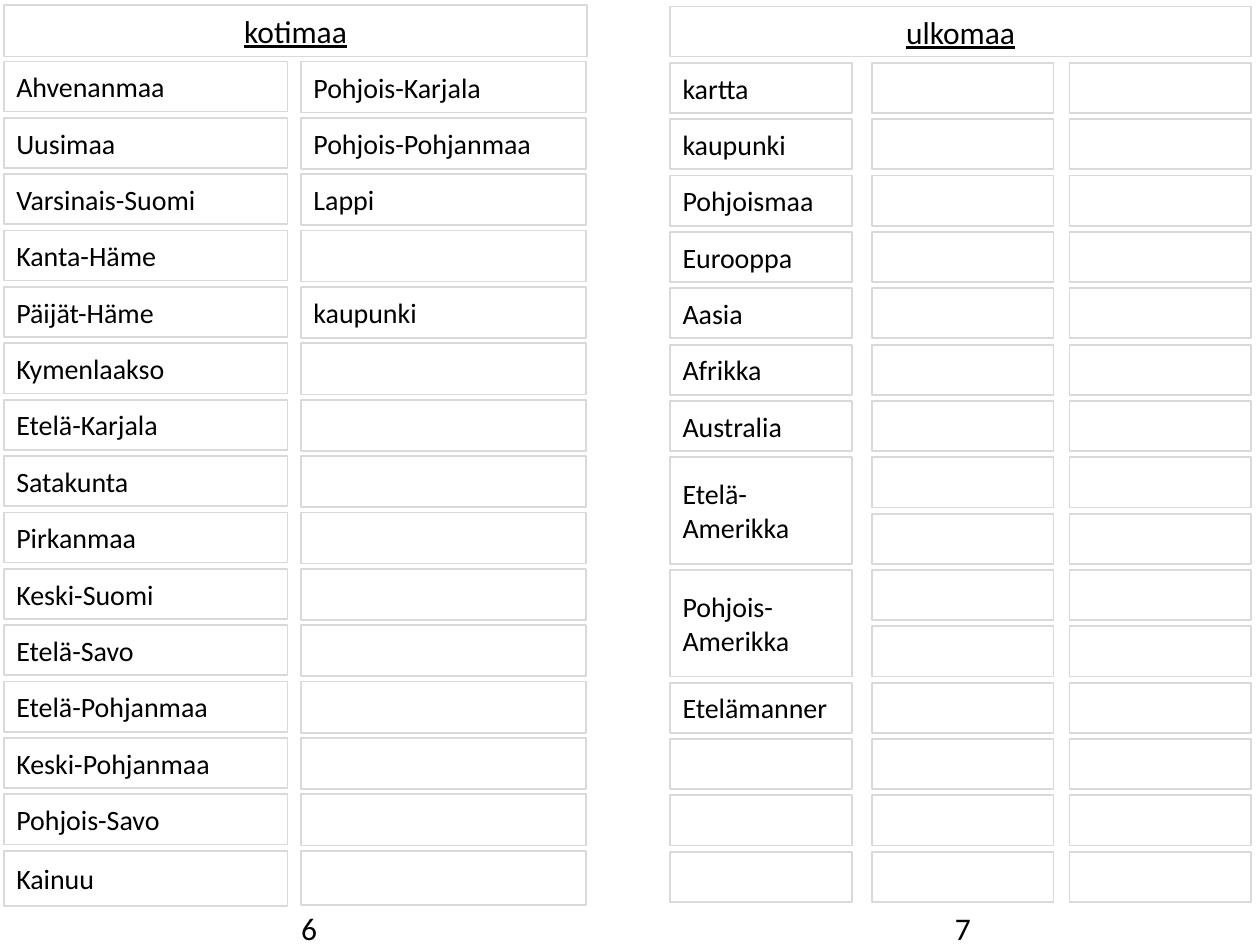
from dataclasses import dataclass

from pptx import Presentation
from pptx.dml.color import RGBColor
from pptx.enum.shapes import MSO_SHAPE
from pptx.enum.text import MSO_ANCHOR, MSO_AUTO_SIZE, PP_ALIGN
from pptx.util import Cm, Pt

ROWS = 15
CELL_HEIGHT = 1.01
FONT = "Calibri"
TEXT_COLOUR = "000000"
BORDER_COLOUR = "D9D9D9"


@dataclass
class Box:
    left: float
    top: float
    width: float
    height: float


@dataclass
class Column:
    """A stack of cells; its words fill the rows from the top."""
    left: float
    width: float
    top: float
    last_top: float
    words: tuple[str, ...] = ()
    double_rows: tuple[str, ...] = ()
    cell_height: float = CELL_HEIGHT
    last_height: float = CELL_HEIGHT


@dataclass
class Page:
    heading: str
    heading_box: Box
    number: str
    number_left: float
    columns: list[Column]


REGIONS = (
    "Ahvenanmaa", "Uusimaa", "Varsinais-Suomi", "Kanta-Häme", "Päijät-Häme",
    "Kymenlaakso", "Etelä-Karjala", "Satakunta", "Pirkanmaa", "Keski-Suomi",
    "Etelä-Savo", "Etelä-Pohjanmaa", "Keski-Pohjanmaa", "Pohjois-Savo", "Kainuu",
)
MORE_REGIONS = ("Pohjois-Karjala", "Pohjois-Pohjanmaa", "Lappi", "", "kaupunki")
ABROAD = (
    "kartta", "kaupunki", "Pohjoismaa", "Eurooppa", "Aasia", "Afrikka",
    "Australia", "Etelä-Amerikka", "Pohjois-Amerikka", "Etelämanner",
)

PAGES = [
    Page("kotimaa", Box(0.08, 0.1, 11.76, 1.04), "6", 5.82, [
        Column(0.08, 5.72, 1.24, 17.15, REGIONS, last_height=1.12),
        Column(6.07, 5.74, 1.24, 17.15, MORE_REGIONS,
               cell_height=1.03, last_height=1.1),
    ]),
    Page("ulkomaa", Box(13.51, 0.13, 11.71, CELL_HEIGHT), "7", 19, [
        Column(13.51, 3.66, 1.27, 17.17, ABROAD,
               double_rows=("Etelä-Amerikka", "Pohjois-Amerikka")),
        Column(17.58, 3.66, 1.27, 17.17),
        Column(21.56, 3.66, 1.27, 17.17),
    ]),
]


def colour(hex_value: str) -> RGBColor:
    return RGBColor.from_string(hex_value)


def write_text(shape, text: str, *, size: int = 16, underline: bool = False,
               align=PP_ALIGN.LEFT, anchor=MSO_ANCHOR.MIDDLE) -> None:
    frame = shape.text_frame
    frame.word_wrap = True
    frame.vertical_anchor = anchor
    paragraph = frame.paragraphs[0]
    paragraph.alignment = align
    run = paragraph.add_run()
    run.text = text
    run.font.name = FONT
    run.font.size = Pt(size)
    run.font.underline = underline
    run.font.color.rgb = colour(TEXT_COLOUR)


def add_cell(slide, box: Box, text: str = "", **text_format) -> None:
    shape = slide.shapes.add_shape(MSO_SHAPE.RECTANGLE, Cm(box.left), Cm(box.top),
                                   Cm(box.width), Cm(box.height))
    shape.shadow.inherit = False
    shape.fill.background()
    shape.line.color.rgb = colour(BORDER_COLOUR)
    shape.line.width = Pt(1)
    if text:
        write_text(shape, text, **text_format)


def add_column(slide, column: Column) -> None:
    pitch = (column.last_top - column.top) / (ROWS - 1)
    words = iter(column.words)
    row = 0
    while row < ROWS:
        word = next(words, "")
        span = 2 if word in column.double_rows else 1
        height = column.last_height if row == ROWS - 1 else column.cell_height
        box = Box(column.left, column.top + row * pitch,
                  column.width, height + (span - 1) * pitch)
        add_cell(slide, box, word)
        row += span


def add_page(slide, page: Page) -> None:
    add_cell(slide, page.heading_box, page.heading,
             size=18, underline=True, align=PP_ALIGN.CENTER)
    for column in page.columns:
        add_column(slide, column)
    # Page number
    number = slide.shapes.add_textbox(Cm(page.number_left), Cm(18.21),
                                      Cm(0.91), Cm(1.03))
    write_text(number, page.number, size=18, anchor=MSO_ANCHOR.TOP)
    number.text_frame.auto_size = MSO_AUTO_SIZE.SHAPE_TO_FIT_TEXT


def main() -> None:
    presentation = Presentation()
    presentation.slide_width, presentation.slide_height = Cm(25.4), Cm(19.05)
    slide = presentation.slides.add_slide(presentation.slide_layouts[6])
    for page in PAGES:
        add_page(slide, page)
    presentation.save("out.pptx")


if __name__ == "__main__":
    main()
